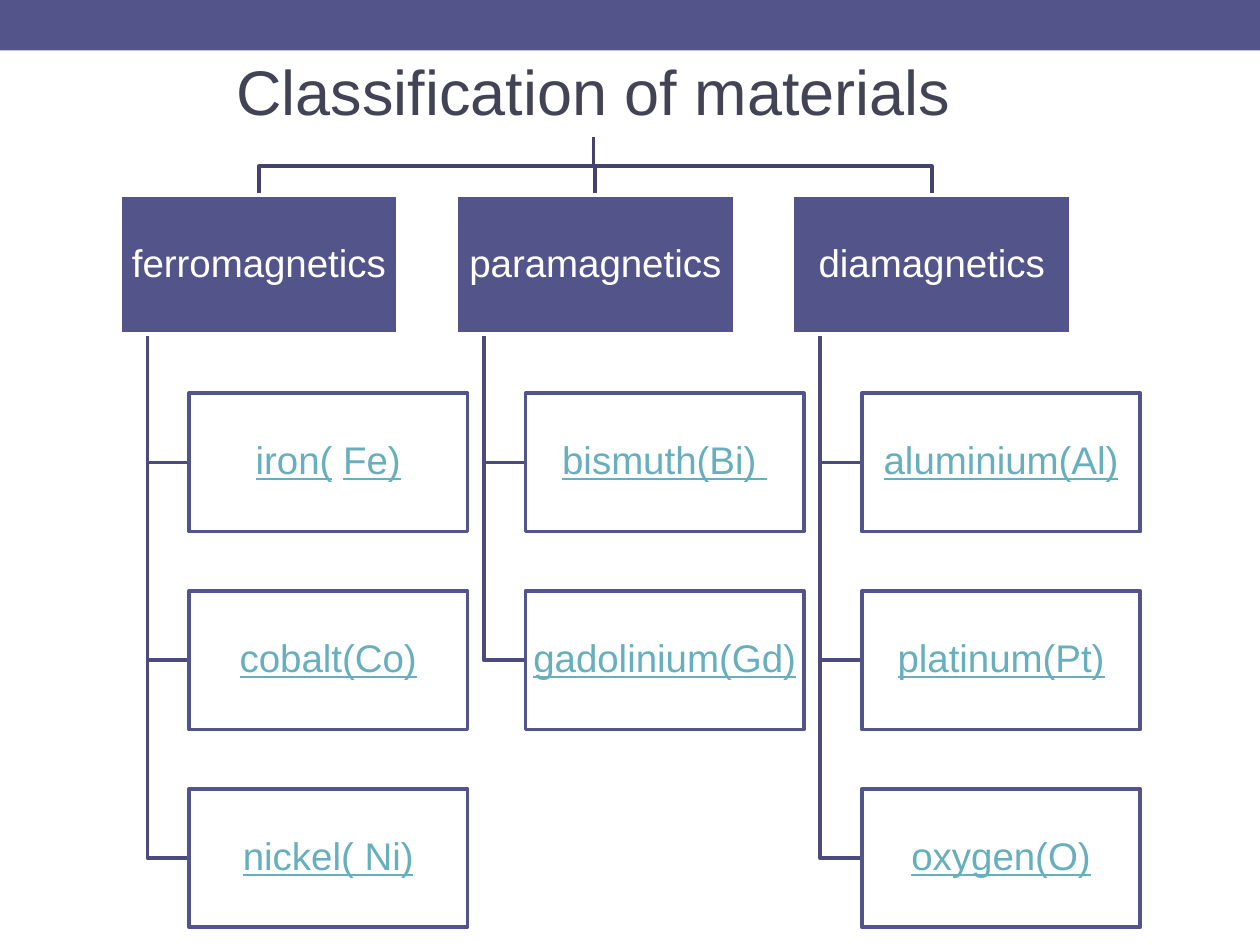
from collections import namedtuple
from dataclasses import dataclass

from lxml import etree
from pptx import Presentation
from pptx import util as u
from pptx.dml.color import RGBColor
from pptx.enum import shapes, text

Box = namedtuple("Box", "x y w h")


@dataclass(frozen=True)
class Theme:
    """Colours, type sizes and line width of the slide."""
    font: str = "Arial"
    main: str = "53548A"
    white: str = "FFFFFF"
    title: str = "424456"
    link: str = "67AFBD"
    trunk: str = "42436F"
    twig: str = "4B4C7D"
    title_pt: int = 36
    body_pt: int = 22
    line_pt: float = 2.08


T = Theme()
SLIDE_W, SLIDE_H = 10, 7.5
NODE_W, NODE_H = 2.21, 1.1
COL_STEP, ROW_STEP = 2.67, 1.57
INDENT, STEM = 0.55, 0.22
BRANCHES = [
    ("ferromagnetics", [["iron(", " ", "Fe)"], ["cobalt(Co)"], ["nickel( Ni)"]]),
    ("paramagnetics", [["bismuth(Bi) "], ["gadolinium(Gd)"]]),
    ("diamagnetics", [["aluminium(Al)"], ["platinum(Pt)"], ["oxygen(O)"]]),
]


def rgb(value):
    """Turn a hex string into a colour."""
    return RGBColor.from_string(value)


def add_rect(s, box, fill, line=None):
    """Add a flat rectangle with an optional outline."""
    sp = s.shapes.add_shape(shapes.MSO_SHAPE.RECTANGLE, *map(u.Inches, box))
    sp.shadow.inherit = False
    sp.fill.solid()
    sp.fill.fore_color.rgb = rgb(fill)
    if line:
        sp.line.color.rgb = rgb(line)
        sp.line.width = u.Pt(T.line_pt)
    else:
        sp.line.fill.background()
    return sp


def set_text(sp, pieces, size, color, inset, underline=False):
    """Write centred text, leaving blank pieces without underline."""
    tf = sp.text_frame
    tf.word_wrap = True
    tf.auto_size = text.MSO_AUTO_SIZE.NONE
    tf.vertical_anchor = text.MSO_ANCHOR.MIDDLE
    tf.margin_left = tf.margin_right = u.Inches(inset)
    tf.margin_top = tf.margin_bottom = u.Inches(inset)
    p = tf.paragraphs[0]
    p.alignment = text.PP_ALIGN.CENTER
    p.line_spacing = 0.9
    for piece in pieces:
        r = p.add_run()
        r.text = piece
        r.font.name = T.font
        r.font.size = u.Pt(size)
        r.font.color.rgb = rgb(color)
        r.font.underline = underline and piece != " "


def add_path(s, points, color):
    """Draw an open, unfilled elbow line through the points."""
    pts = [(u.Inches(x), u.Inches(y)) for x, y in points]
    fb = s.shapes.build_freeform(*pts[0], scale=1.0)
    fb.add_line_segments(pts[1:], close=False)
    sp = fb.convert_to_shape()
    sp.shadow.inherit = False
    sp.fill.background()
    sp.line.color.rgb = rgb(color)
    sp.line.width = u.Pt(T.line_pt)
    ln = sp.line._get_or_add_ln()
    etree.SubElement(ln, ln.tag.replace("}ln", "}round"))


def add_title(s, box):
    """Place the title placeholder in the box."""
    sp = s.shapes.title
    sp.left, sp.top, sp.width, sp.height = map(u.Inches, box)
    set_text(sp, ["Classification of materials"], T.title_pt, T.title, 0.03)


def add_branch(s, head, name, items):
    """Draw a class heading and its materials, joined by elbow lines."""
    stem_x, foot = head.x + STEM, head.y + head.h
    for row, pieces in enumerate(items, 1):
        box = Box(head.x + INDENT, head.y + row * ROW_STEP, head.w, head.h)
        mid = box.y + box.h / 2
        add_path(s, [(stem_x, foot), (stem_x, mid), (box.x, mid)], T.twig)
        sp = add_rect(s, box, T.white, T.main)
        set_text(sp, pieces, T.body_pt, T.link, 0.02, underline=True)
    sp = add_rect(s, head, T.main, T.white)
    set_text(sp, [name], T.body_pt, T.white, 0.02)


def add_tree(s, root, origin):
    """Draw every branch under the root box, from the origin rightwards."""
    x, y = origin
    root_x, foot = root.x + root.w / 2, root.y + root.h
    mid = (foot + y) / 2
    for col, (name, items) in enumerate(BRANCHES):
        head = Box(x + col * COL_STEP, y, NODE_W, NODE_H)
        cx = head.x + head.w / 2
        add_path(s, [(root_x, foot), (root_x, mid), (cx, mid), (cx, y)], T.trunk)
        add_branch(s, head, name, items)


def main():
    """Build and save the slide."""
    prs = Presentation()
    prs.slide_width, prs.slide_height = u.Inches(SLIDE_W), u.Inches(SLIDE_H)
    s = prs.slides.add_slide(prs.slide_layouts[5])
    root = Box(0.93, 0.42, 7.56, 0.67)
    add_rect(s, Box(0, 0, SLIDE_W, 0.4), T.main)
    add_title(s, root)
    add_tree(s, root, (0.95, 1.55))
    prs.save("out.pptx")


if __name__ == "__main__":
    main()
